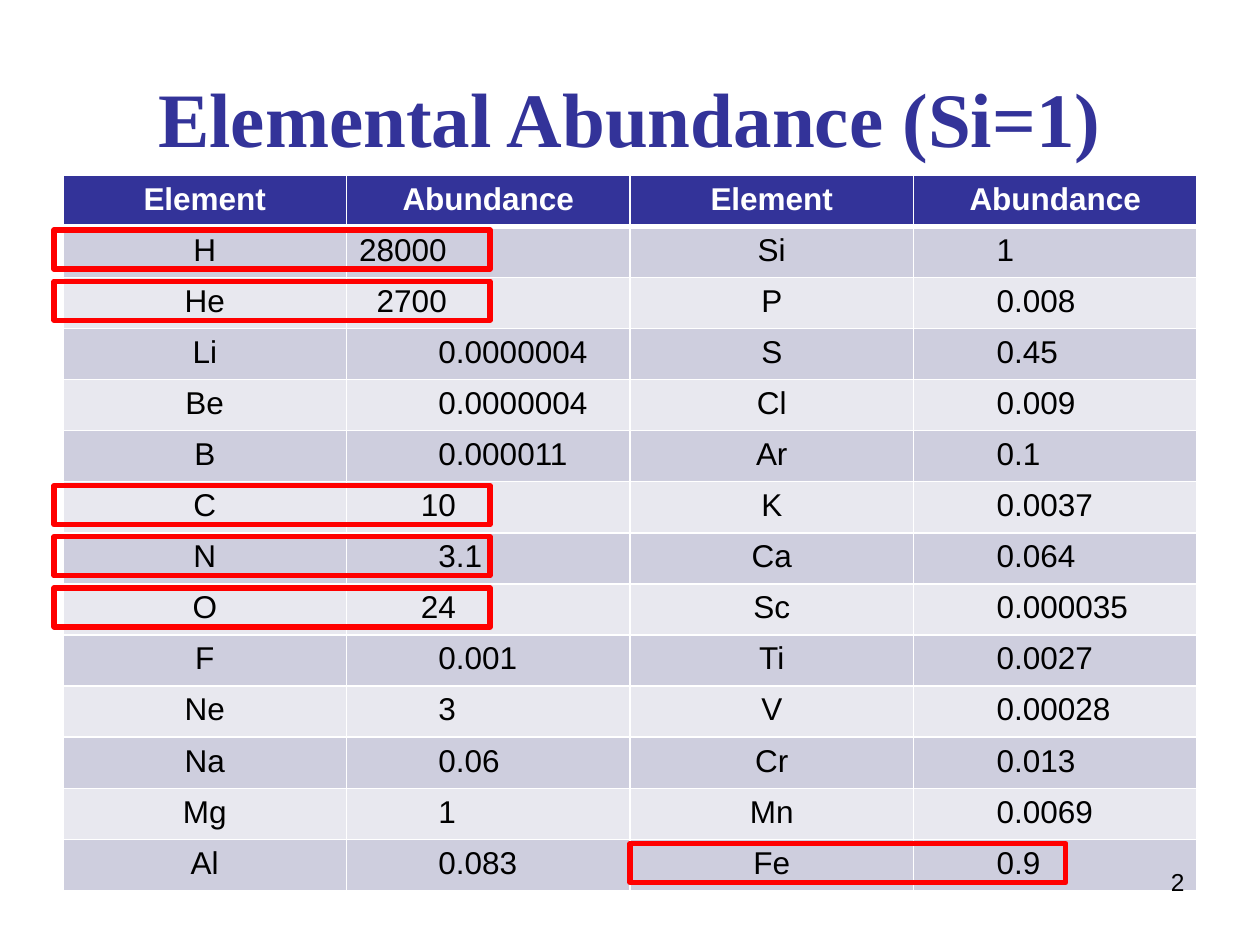
import pptx
import pptx.util
import pptx.dml.color
import pptx.enum.shapes
import pptx.enum.text
import pptx.oxml
import pptx.oxml.ns
from dataclasses import dataclass

Inches = pptx.util.Inches
Pt = pptx.util.Pt
ALIGN = pptx.enum.text.PP_ALIGN


@dataclass(frozen=True)
class Theme:
    navy: str = "333399"
    white: str = "FFFFFF"
    black: str = "000000"
    bands: tuple = ("CECEDE", "E8E8EF")
    red: str = "FF0000"
    title_font: str = "Times New Roman"
    body_font: str = "Arial"
    title_size: int = 44
    body_size: int = 18
    number_size: int = 14


theme = Theme()


def add_run(p, text, font, size, color, bold=False):
    r = p.add_run()
    r.text = text
    r.font.name, r.font.size, r.font.bold = font, Pt(size), bold
    r.font.color.rgb = pptx.dml.color.RGBColor.from_string(color)


def set_borders(cell, bottom=1, top=1):
    tc_pr = cell._tc.get_or_add_tcPr()
    for i, (side, width) in enumerate((("L", 1), ("R", 1), ("T", top), ("B", bottom))):
        tc_pr.insert(i, pptx.oxml.parse_xml(
            f'<a:ln{side} {pptx.oxml.ns.nsdecls("a")} w="{Pt(width)}"><a:solidFill>'
            f'<a:srgbClr val="{theme.white}"/></a:solidFill></a:ln{side}>'))


prs = pptx.Presentation()
prs.slide_width, prs.slide_height = Inches(10), Inches(7.5)
s = prs.slides.add_slide(prs.slide_layouts[5])

# Title
title = s.shapes.title
title.left, title.top, title.width, title.height = (Inches(v) for v in (0.5, 0.3, 9, 1.25))
tf = title.text_frame
tf.vertical_anchor = pptx.enum.text.MSO_ANCHOR.MIDDLE
p = tf.paragraphs[0]
p.alignment = ALIGN.CENTER
add_run(p, "Elemental Abundance (Si=1)", theme.title_font, theme.title_size, theme.navy, True)

# Abundance table
rows = [
    ("Element", "Abundance", "Element", "Abundance"),
    ("H", "28000", "Si", "1"),
    ("He", "2700", "P", "0.008"),
    ("Li", "0.0000004", "S", "0.45"),
    ("Be", "0.0000004", "Cl", "0.009"),
    ("B", "0.000011", "Ar", "0.1"),
    ("C", "10", "K", "0.0037"),
    ("N", "3.1", "Ca", "0.064"),
    ("O", "24", "Sc", "0.000035"),
    ("F", "0.001", "Ti", "0.0027"),
    ("Ne", "3", "V", "0.00028"),
    ("Na", "0.06", "Cr", "0.013"),
    ("Mg", "1", "Mn", "0.0069"),
    ("Al", "0.083", "Fe", "0.9"),
]
left, top, width, height = 0.5, 1.39, 9, 5.68
row_h, col_w = height / len(rows), width / 4
# Indents line the numbers up, by count of digits before the decimal point
left_indents = {1: 0.63, 2: 0.49, 4: 0.14, 5: 0}
right_indent = 0.56

table = s.shapes.add_table(len(rows), 4, Inches(left), Inches(top),
                           Inches(width), Inches(height)).table
for i, row in enumerate(rows):
    table.rows[i].height = Inches(row_h)
    header = i == 0
    for j, text in enumerate(row):
        cell = table.cell(i, j)
        cell.fill.solid()
        cell.fill.fore_color.rgb = pptx.dml.color.RGBColor.from_string(
            theme.navy if header else theme.bands[(i - 1) % 2])
        set_borders(cell, bottom=3 if header else 1, top=3 if i == 1 else 1)
        p = cell.text_frame.paragraphs[0]
        if header or j % 2 == 0:
            p.alignment = ALIGN.CENTER
        else:
            p.alignment = ALIGN.LEFT
            indent = left_indents[len(text.split(".")[0])] if j == 1 else right_indent
            cell.margin_left = Inches(0.1 + indent)
        add_run(p, text, theme.body_font, theme.body_size,
                theme.white if header else theme.black, header)

# Boxes around the most abundant elements
group = s.shapes.add_group_shape()
boxes = [(group.shapes, 0.43, i) for i in (1, 2, 6, 7, 8)] + [(s.shapes, 5, 13)]
for shapes, x, i in boxes:
    sp = shapes.add_shape(pptx.enum.shapes.MSO_SHAPE.RECTANGLE, Inches(x),
                          Inches(top + i * row_h + 0.03), Inches(3.46), Inches(0.31))
    sp.shadow.inherit = False
    sp.fill.background()
    sp.line.color.rgb = pptx.dml.color.RGBColor.from_string(theme.red)
    sp.line.width = Pt(3)

# Slide number
tf = s.shapes.add_textbox(Inches(7.17), Inches(6.83), Inches(2.33), Inches(0.52)).text_frame
tf.word_wrap = True
p = tf.paragraphs[0]
p.alignment = ALIGN.RIGHT
add_run(p, "2", theme.body_font, theme.number_size, theme.black)

prs.save("out.pptx")
